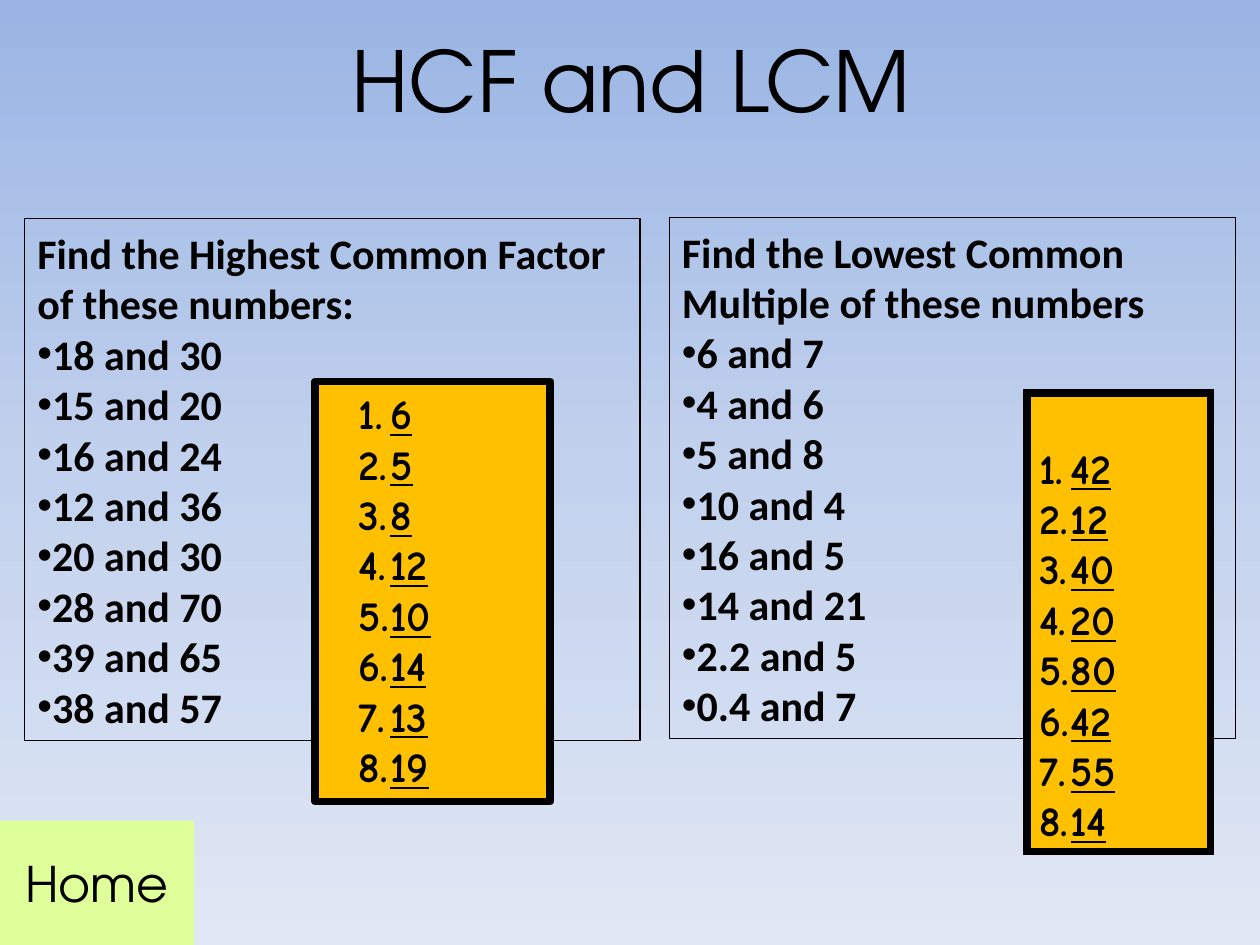
"""Build the HCF and LCM practice slide with its answer panels."""
import copy

import pptx
import pptx.dml.color
import pptx.enum.shapes
import pptx.enum.text
import pptx.oxml
import pptx.oxml.ns
import pptx.util

RGBColor = pptx.dml.color.RGBColor
Pt = pptx.util.Pt
Anchor = pptx.enum.text.MSO_ANCHOR
Align = pptx.enum.text.PP_ALIGN
qn = pptx.oxml.ns.qn

BLACK = RGBColor(0x00, 0x00, 0x00)
AMBER = RGBColor(0xFF, 0xC0, 0x00)
LIME = RGBColor(0xDF, 0xFF, 0x9B)
SKY = [
    (0, RGBColor(0x9A, 0xB5, 0xE4)),
    (0.5, RGBColor(0xC2, 0xD1, 0xED)),
    (1, RGBColor(0xE1, 0xE8, 0xF5)),
]

HCF = ["18 and 30", "15 and 20", "16 and 24", "12 and 36",
       "20 and 30", "28 and 70", "39 and 65", "38 and 57"]
LCM = ["6 and 7", "4 and 6", "5 and 8", "10 and 4",
       "16 and 5", "14 and 21", "2.2 and 5", "0.4 and 7"]
HCF_ANSWERS = ["6", "5", "8", "12", "10", "14", "13", "19"]
LCM_ANSWERS = ["42", "12", "40", "20", "80", "42", "55", "14"]


class Deck:
    """Hold the text styles and the current slide."""

    heading = {"name": "TeX Gyre Adventor", "size": Pt(48), "bold": False}
    button = {"name": "TeX Gyre Adventor", "size": Pt(28)}
    question = {"name": "Calibri", "size": Pt(24), "bold": True}
    answer = {"name": "Comic Neue", "size": Pt(24), "bold": True, "underline": True}

    def __init__(self, prs):
        self.s = prs.slides.add_slide(prs.slide_layouts[3])

    def background(self, stops):
        fill = self.s.background.fill
        fill.gradient()
        fill.gradient_angle = 270
        gs = self.s.element.find(".//" + qn("a:gsLst"))
        gs.insert(1, copy.deepcopy(gs[0]))
        for stop, (position, color) in zip(fill.gradient_stops, stops):
            stop.position = position
            stop.color.rgb = color

    def place(self, sp, box, anchor):
        for name, value in zip(("left", "top", "width", "height"), box):
            setattr(sp, name, Pt(value))
        tf = sp.text_frame
        tf.word_wrap = True
        tf.auto_size = pptx.enum.text.MSO_AUTO_SIZE.NONE
        tf.vertical_anchor = anchor
        return tf

    def add_lines(self, tf, lines, style, align=Align.LEFT):
        for i, line in enumerate(lines):
            p = tf.add_paragraph() if i else tf.paragraphs[0]
            p.alignment = align
            p.space_before = Pt(0)
            r = p.add_run()
            r.text = line
            r.font.color.rgb = BLACK
            for name, value in style.items():
                setattr(r.font, name, value)

    def append_xml(self, parent, tag, attrs):
        el = pptx.oxml.parse_xml(f"<a:{tag} {pptx.oxml.ns.nsdecls('a')}/>")
        for name, value in attrs.items():
            el.set(name, value)
        parent.append(el)

    def mark(self, p, tag, margin=0, indent=0, **attrs):
        pPr = p._p.get_or_add_pPr()
        pPr.set("marL", str(Pt(margin)))
        pPr.set("indent", str(Pt(indent)))
        self.append_xml(pPr, tag, attrs)

    def outline(self, sp, width, join="round"):
        sp.line.color.rgb = BLACK
        sp.line.width = Pt(width)
        self.append_xml(sp.element.find(".//" + qn("a:ln")), join, {})

    def title(self, text, box):
        tf = self.place(self.s.shapes.title, box, Anchor.MIDDLE)
        self.add_lines(tf, [text], self.heading, Align.CENTER)

    def questions(self, idx, prompt, items, box):
        sp = self.s.placeholders[idx]
        tf = self.place(sp, box, Anchor.MIDDLE)
        self.outline(sp, 0.75)
        self.add_lines(tf, [prompt] + items, self.question)
        self.mark(tf.paragraphs[0], "buNone")
        for p in tf.paragraphs[1:]:
            self.mark(p, "buChar", char="•")

    def panel(self, box, color, anchor):
        kind = pptx.enum.shapes.MSO_SHAPE.RECTANGLE
        sp = self.s.shapes.add_shape(kind, *map(Pt, box))
        sp.shadow.inherit = False
        sp.fill.solid()
        sp.fill.fore_color.rgb = color
        sp.line.fill.background()
        return sp, self.place(sp, box, anchor)

    def home(self, text, box):
        sp, tf = self.panel(box, LIME, Anchor.MIDDLE)
        self.add_lines(tf, [text], self.button, Align.CENTER)

    def answers(self, items, box, anchor, margin, join):
        sp, tf = self.panel(box, AMBER, anchor)
        self.outline(sp, 4.5, join)
        self.add_lines(tf, items, self.answer)
        for p in tf.paragraphs:
            self.mark(p, "buAutoNum", margin, -18, type="arabicPeriod")


def main():
    """Assemble and save the slide."""
    prs = pptx.Presentation()
    prs.slide_width, prs.slide_height = Pt(720), Pt(540)
    deck = Deck(prs)
    deck.background(SKY)
    deck.title("HCF and LCM", (36.7, 0, 648, 90))
    deck.home("Home", (0, 469, 111, 71))
    deck.questions(1, "Find the Highest Common Factor of these numbers:",
                   HCF, (14.2, 125, 351.5, 298))
    deck.questions(2, "Find the Lowest Common Multiple of these numbers",
                   LCM, (382.5, 124.2, 323.5, 298))
    deck.answers(LCM_ANSWERS, (586.8, 224.6, 105, 262), Anchor.BOTTOM, 18, "miter")
    deck.answers(HCF_ANSWERS, (180, 218, 134.5, 240), Anchor.TOP, 36, "round")
    prs.save("out.pptx")


if __name__ == "__main__":
    main()
